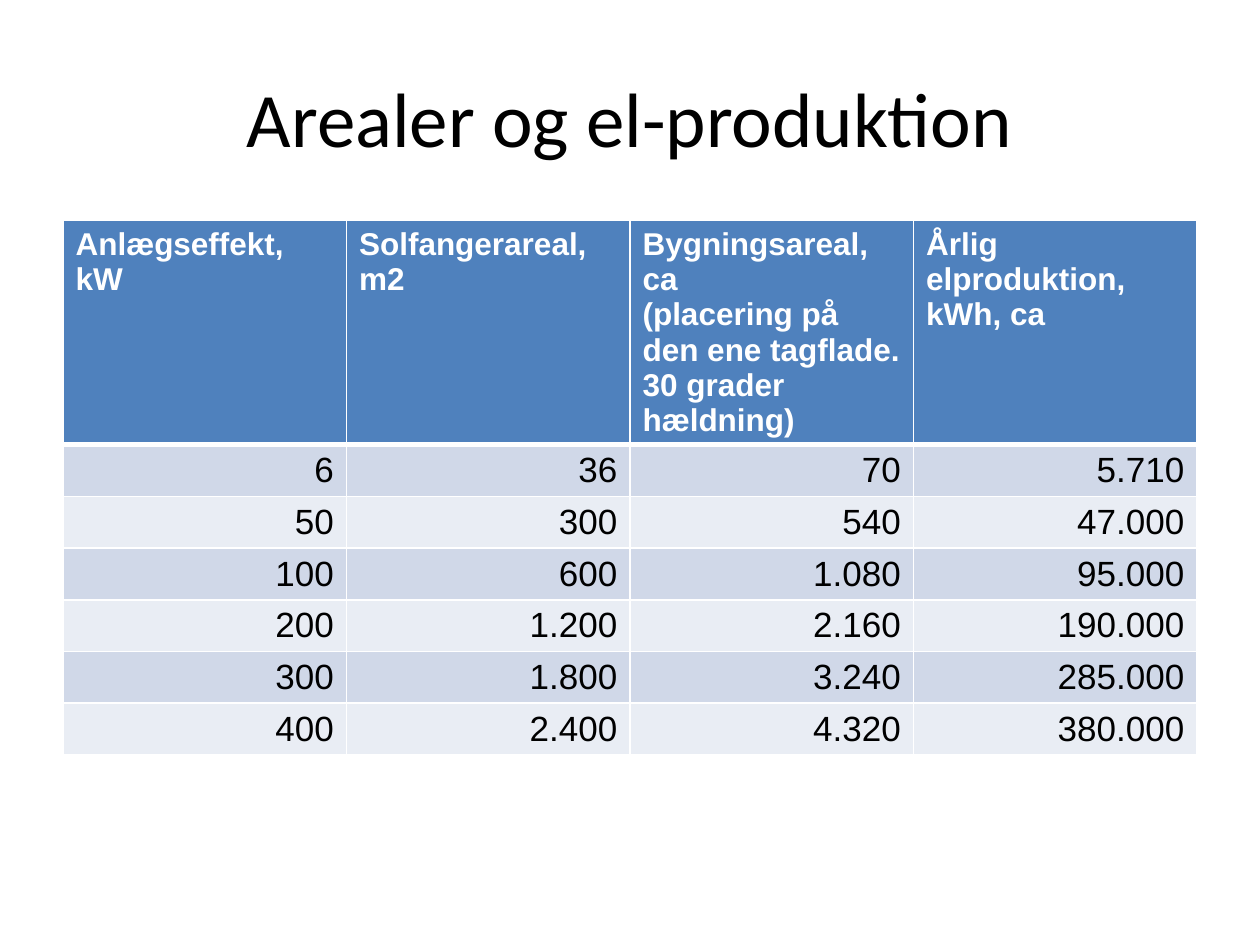
from typing import NamedTuple

from lxml.etree import SubElement
from pptx import Presentation
from pptx.dml.color import RGBColor
from pptx.enum.text import MSO_ANCHOR, PP_ALIGN
from pptx.oxml.ns import qn
from pptx.util import Inches, Pt

WHITE = RGBColor(0xFF, 0xFF, 0xFF)
BLACK = RGBColor(0, 0, 0)
HEADER_BLUE = RGBColor(0x4F, 0x81, 0xBD)
BAND_DARK = RGBColor(0xD0, 0xD8, 0xE8)
BAND_LIGHT = RGBColor(0xE9, 0xED, 0xF4)

COL_WIDTH = 2.25
ROW_HEIGHT = 0.41


class PlantSize(NamedTuple):
    power: str
    collector_area: str
    building_area: str
    annual_output: str


HEADERS = PlantSize(
    "Anlægseffekt, kW",
    "Solfangerareal, m2",
    "Bygningsareal, ca\n(placering på den ene tagflade. 30 grader hældning)",
    "Årlig elproduktion, kWh, ca",
)
PLANTS = [
    PlantSize("6", "36", "70", "5.710"),
    PlantSize("50", "300", "540", "47.000"),
    PlantSize("100", "600", "1.080", "95.000"),
    PlantSize("200", "1.200", "2.160", "190.000"),
    PlantSize("300", "1.800", "3.240", "285.000"),
    PlantSize("400", "2.400", "4.320", "380.000"),
]


def set_text(tf, text: str, *, size: int, color: RGBColor, font: str = "Arial",
             bold: bool = False, align=PP_ALIGN.LEFT) -> None:
    p = tf.paragraphs[0]
    p.text = text
    p.alignment = align
    for r in p.runs:
        r.font.name = font
        r.font.size = Pt(size)
        r.font.bold = bold
        r.font.color.rgb = color


def set_borders(cell, **widths: float) -> None:
    """Draw white borders; keys are L, R, T and B, values are points."""
    tc_pr = cell._tc.get_or_add_tcPr()
    for side, width in widths.items():
        ln = SubElement(tc_pr, qn(f"a:ln{side}"), w=str(Pt(width)))
        fill = SubElement(ln, qn("a:solidFill"))
        SubElement(fill, qn("a:srgbClr"), val=str(WHITE))


def fill_row(table, index: int, values: PlantSize, fill: RGBColor,
             top: float, bottom: float, **text_format) -> None:
    table.rows[index].height = Inches(ROW_HEIGHT)
    for cell, value in zip(table.rows[index].cells, values):
        # The schema wants the borders ahead of the fill
        set_borders(cell, L=1, R=1, T=top, B=bottom)
        cell.fill.solid()
        cell.fill.fore_color.rgb = fill
        set_text(cell.text_frame, value, **text_format)


def add_plant_table(s) -> None:
    frame = s.shapes.add_table(len(PLANTS) + 1, len(HEADERS), Inches(0.5),
                               Inches(1.75), Inches(9), Inches(3.9))
    table = frame.table
    for column in table.columns:
        column.width = Inches(COL_WIDTH)
    fill_row(table, 0, HEADERS, HEADER_BLUE, top=1, bottom=3,
             size=18, color=WHITE, bold=True)
    for i, plant in enumerate(PLANTS, start=1):
        fill_row(table, i, plant, BAND_DARK if i % 2 else BAND_LIGHT,
                 top=3 if i == 1 else 1, bottom=1,
                 size=20, color=BLACK, align=PP_ALIGN.RIGHT)
    frame.height = Inches(3.9)


def main() -> None:
    prs = Presentation()
    prs.slide_width, prs.slide_height = Inches(10), Inches(7.5)
    s = prs.slides.add_slide(prs.slide_layouts[5])

    title = s.shapes.title
    title.left, title.top = Inches(0.5), Inches(0.3)
    title.width, title.height = Inches(9), Inches(1.25)
    title.text_frame.vertical_anchor = MSO_ANCHOR.MIDDLE
    set_text(title.text_frame, "Arealer og el-produktion", size=44,
             color=BLACK, font="Calibri", align=PP_ALIGN.CENTER)

    add_plant_table(s)
    prs.save("out.pptx")


if __name__ == "__main__":
    main()
